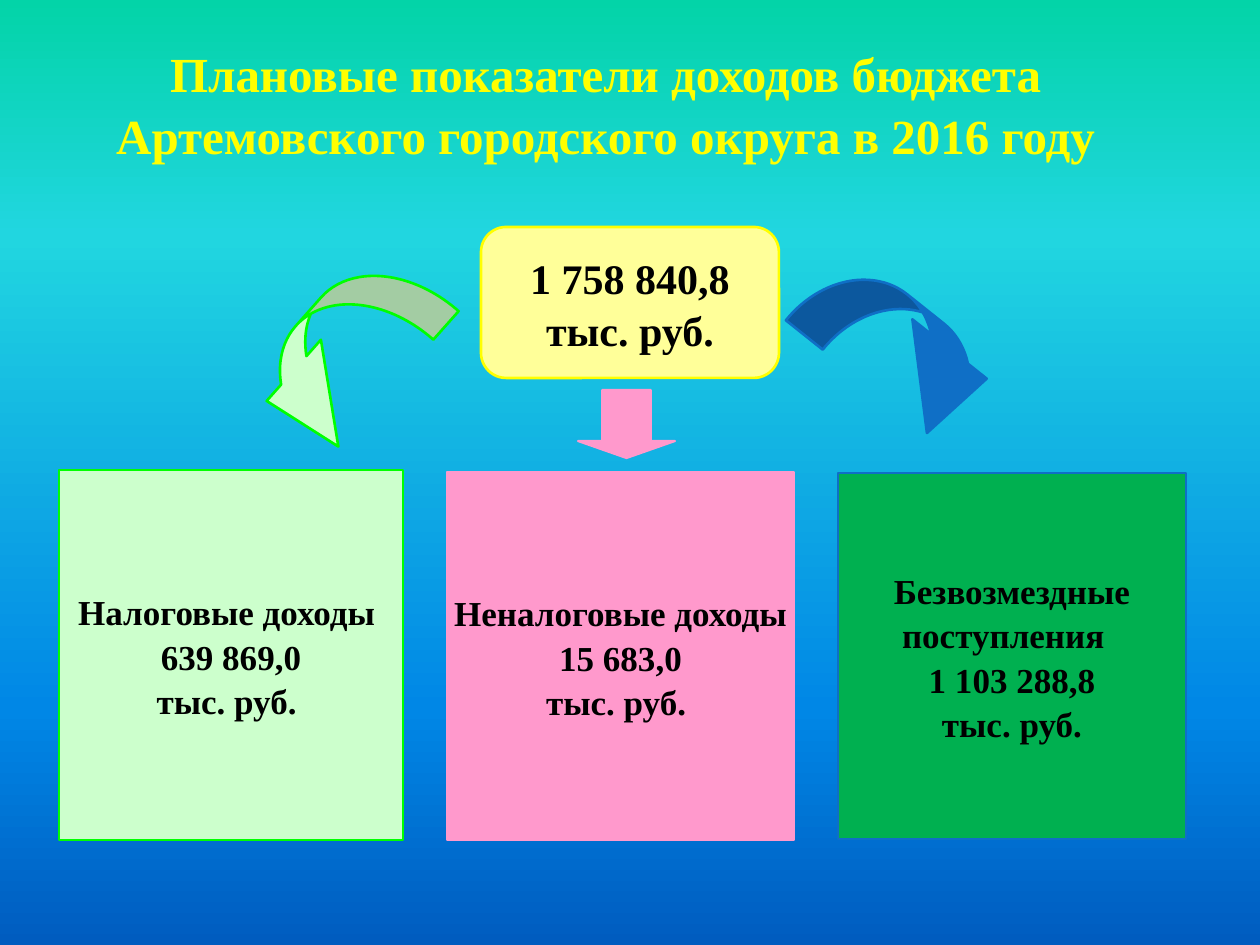
from copy import deepcopy

from pptx import Presentation
from pptx.dml.color import RGBColor
from pptx.enum.shapes import MSO_SHAPE
from pptx.enum.text import MSO_ANCHOR, PP_ALIGN
from pptx.oxml.ns import qn
from pptx.util import Pt

ROUND, RECT = MSO_SHAPE.ROUNDED_RECTANGLE, MSO_SHAPE.RECTANGLE
RIGHT, LEFT = MSO_SHAPE.CURVED_DOWN_ARROW, MSO_SHAPE.CURVED_UP_ARROW
DOWN = MSO_SHAPE.DOWN_ARROW
MIDDLE, BOTTOM = MSO_ANCHOR.MIDDLE, MSO_ANCHOR.BOTTOM
CENTER = PP_ALIGN.CENTER

# Content
TITLE = ["Плановые показатели доходов бюджета Артемовского городского округа в 2016 году"]
TOTAL = ["1 758 840,8", "тыс. руб."]
TAX = ["Налоговые доходы  639 869,0", "тыс. руб. "]
OTHER = ["Неналоговые доходы 15 683,0", "тыс. руб. "]
GRANTS = ["Безвозмездные поступления  ", "1 103 288,8", "тыс. руб."]

COLORS = {
    "title": "FFFF00", "text": "000000", "cream": "FFFF99", "yellow": "FFFF00",
    "mint": "CCFFCC", "lime": "00FF00", "pink": "FF99CC",
    "green": "00B050", "blue": "0F6FC6",
}
SKY = [(0, "03D4A8"), (0.25, "21D6E0"), (0.75, "0087E6"), (1, "005CBF")]

# Boxes: place, kind, fill, line, text, size, side and top insets
BOXES = [
    ((481, 227, 298, 151), ROUND, "cream", "yellow", TOTAL, 24, (18, 6)),
    ((59, 470, 344, 370), RECT, "mint", "lime", TAX, 20, (15, 0)),
    ((447, 472, 347, 368), RECT, "pink", "pink", OTHER, 20, (0, 0)),
    ((838, 473, 348, 366), RECT, "green", "blue", GRANTS, 20, (15, 0)),
]
# Arrows: place, kind, fill, line, line width, turn, adjustments
ARROWS = [
    ((791, 306, 228, 96), RIGHT, "blue", "blue", 1.5, 38.6, (0.49, 0.99, 0.83)),
    ((232, 301, 222, 112), LEFT, "mint", "lime", 1.5, 131.6, (0.34, 0.73, 0.75)),
    ((578, 390, 97, 68), DOWN, "pink", "pink", 1.25, 0, (0.5, 0.25)),
]

SCALE = 914400 / 126


def px(n):
    return round(n * SCALE)


def tint(name):
    return RGBColor.from_string(COLORS[name])


def write(shape, lines, size, color, anchor, pad):
    side, top = map(px, pad)
    frame = shape.text_frame
    form = {"word_wrap": True, "vertical_anchor": anchor,
            "margin_left": side, "margin_right": side,
            "margin_top": top, "margin_bottom": top}
    for key, value in form.items():
        setattr(frame, key, value)
    for i, line in enumerate(lines):
        para = frame.add_paragraph() if i else frame.paragraphs[0]
        para.alignment, para.line_spacing = CENTER, 1.05
        run = para.add_run()
        run.text = line
        font = {"name": "Times New Roman", "size": Pt(size), "bold": True}
        for key, value in font.items():
            setattr(run.font, key, value)
        run.font.color.rgb = tint(color)


def draw(slide, place, kind, fill, line, width):
    shape = slide.shapes.add_shape(kind, *map(px, place))
    shape.shadow.inherit = False
    shape.fill.solid()
    shape.fill.fore_color.rgb = tint(fill)
    shape.line.color.rgb = tint(line)
    shape.line.width = Pt(width)
    return shape


def paint(slide):
    fill = slide.background.fill
    fill.gradient()
    fill.gradient_angle = 270
    stops = slide.element.find(".//" + qn("a:gsLst"))
    while len(stops) < len(SKY):
        stops.append(deepcopy(stops[0]))
    for stop, (spot, color) in zip(fill.gradient_stops, SKY):
        stop.position = spot
        stop.color.rgb = RGBColor.from_string(color)


def main():
    deck = Presentation()
    deck.slide_width, deck.slide_height = px(1260), px(945)
    slide = deck.slides.add_slide(deck.slide_layouts[6])
    paint(slide)

    # Title
    title = slide.shapes.add_textbox(*map(px, (0, 26, 1211, 144)))
    write(title, TITLE, 28, "title", BOTTOM, (13, 6))

    # Total and its three parts
    for place, kind, fill, line, lines, size, pad in BOXES:
        box = draw(slide, place, kind, fill, line, 1.5)
        write(box, lines, size, "text", MIDDLE, pad)

    # Arrows from the total to each part
    for place, kind, fill, line, width, turn, adjust in ARROWS:
        arrow = draw(slide, place, kind, fill, line, width)
        arrow.rotation = turn
        for i, value in enumerate(adjust):
            arrow.adjustments[i] = value

    deck.save("out.pptx")


if __name__ == "__main__":
    main()
